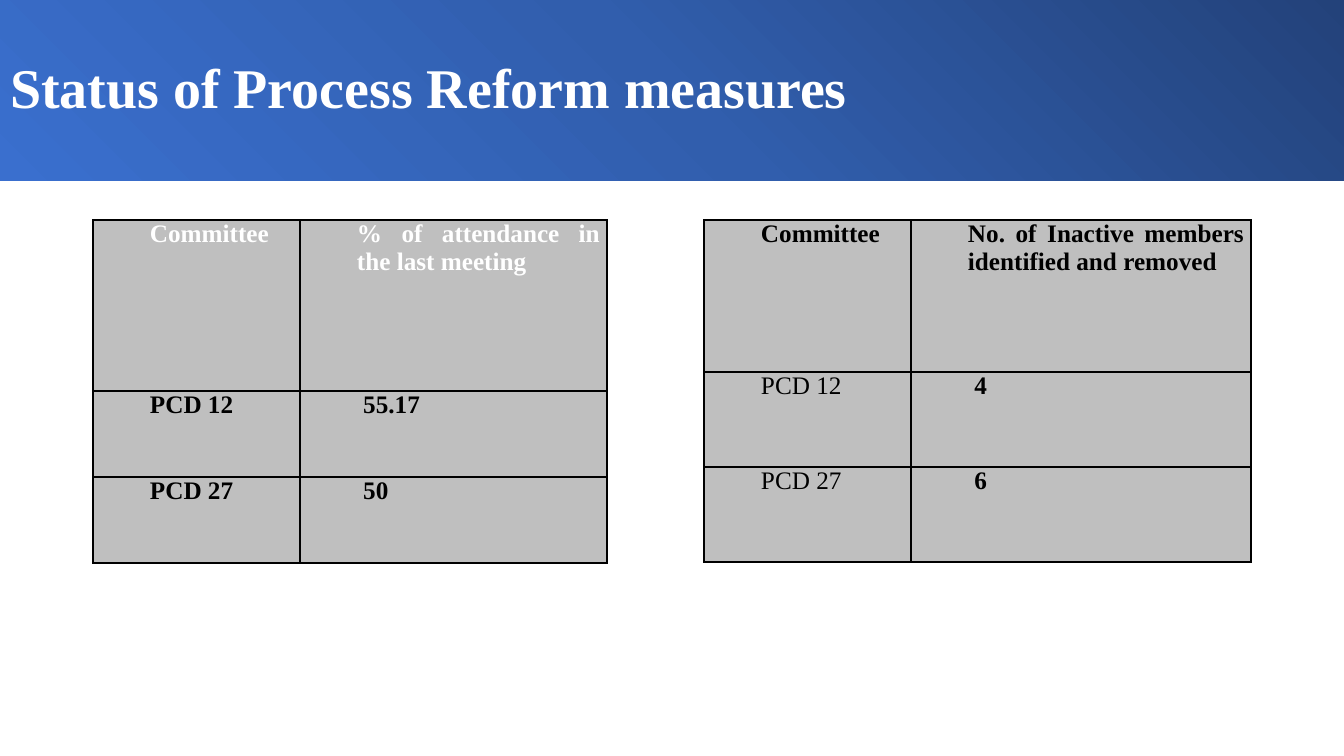
from copy import deepcopy

from pptx import Presentation
from pptx.dml.color import RGBColor
from pptx.enum.text import MSO_ANCHOR as Anchor, MSO_AUTO_SIZE as AutoSize, PP_ALIGN as Align
from pptx.oxml import parse_xml
from pptx.oxml.ns import nsdecls
from pptx.util import Pt

WHITE = RGBColor(0xFF, 0xFF, 0xFF)
BLACK = RGBColor(0x00, 0x00, 0x00)
GREY = RGBColor(0xBF, 0xBF, 0xBF)
BANNER_COLORS = (
    RGBColor(0x23, 0x42, 0x7A),
    RGBColor(0x31, 0x5E, 0xAD),
    RGBColor(0x3A, 0x6F, 0xCE),
)
SLIDE_WIDTH, SLIDE_HEIGHT = 1344, 756


def px(length):
    return round(length * 914400 / 100.8)


class ReportSlide:
    """Holds the style and the current slide, and adds its elements."""

    font_name = "Times New Roman"
    title_size = 40
    table_size = 18
    cell_margin = 7
    cell_indent = 50

    def __init__(self, presentation):
        self.slide = presentation.slides.add_slide(presentation.slide_layouts[5])

    def style_text(self, paragraph, size, color, bold):
        for run in paragraph.runs:
            font = run.font
            font.name, font.size, font.bold = self.font_name, Pt(size), bold
            font.color.rgb = color

    def title(self, text, height):
        shape = self.slide.shapes.title
        shape.left, shape.top = 0, 0
        shape.width, shape.height = px(SLIDE_WIDTH), px(height)
        self.gradient(shape.fill)
        frame = shape.text_frame
        frame.text = text
        frame.auto_size = AutoSize.NONE
        frame.vertical_anchor = Anchor.MIDDLE
        paragraph = frame.paragraphs[0]
        paragraph.alignment = Align.LEFT
        paragraph.line_spacing = 0.9
        self.style_text(paragraph, self.title_size, WHITE, True)

    def gradient(self, fill):
        fill.gradient()
        fill.gradient_angle = 225
        stop_list = fill._xPr.find(".//{*}gsLst")
        stop_list.insert(1, deepcopy(stop_list[0]))
        for index, (stop, color) in enumerate(zip(fill.gradient_stops, BANNER_COLORS)):
            stop.position = index / 2
            stop.color.rgb = color

    def table(self, left, top, widths, heights, rows, header_color, label_bold):
        table = self.slide.shapes.add_table(
            len(rows), len(widths), px(left), px(top), px(sum(widths)), px(sum(heights))
        ).table
        table.first_row = table.horz_banding = False
        for column, width in zip(table.columns, widths):
            column.width = px(width)
        for row, height in zip(table.rows, heights):
            row.height = px(height)
        for row_index, row in enumerate(rows):
            for column_index, text in enumerate(row):
                is_header = row_index == 0
                color = header_color if is_header else BLACK
                bold = is_header or column_index > 0 or label_bold
                self.cell(table.cell(row_index, column_index), text, color, bold)

    def cell(self, cell, text, color, bold):
        cell.margin_left = cell.margin_right = px(self.cell_margin)
        cell.margin_top = cell.margin_bottom = 0
        self.borders(cell)
        cell.fill.solid()
        cell.fill.fore_color.rgb = GREY
        cell.text_frame.text = text
        paragraph = cell.text_frame.paragraphs[0]
        paragraph.alignment = Align.JUSTIFY
        paragraph._p.get_or_add_pPr().set("marL", str(px(self.cell_indent)))
        self.style_text(paragraph, self.table_size, color, bold)

    def borders(self, cell):
        properties = cell._tc.get_or_add_tcPr()
        for side in "LRTB":
            properties.append(parse_xml(
                f'<a:ln{side} {nsdecls("a")} w="{Pt(1)}"><a:solidFill>'
                f'<a:srgbClr val="{BLACK}"/></a:solidFill></a:ln{side}>'
            ))


def main():
    presentation = Presentation()
    presentation.slide_width = px(SLIDE_WIDTH)
    presentation.slide_height = px(SLIDE_HEIGHT)
    report = ReportSlide(presentation)
    report.title("Status of Process Reform measures", 181)
    attendance = [
        ("Committee", "% of attendance in the last meeting"),
        ("PCD 12", " 55.17"),
        ("PCD 27", " 50"),
    ]
    inactive_members = [
        ("Committee", "No. of Inactive members identified and removed"),
        ("PCD 12", " 4"),
        ("PCD 27", " 6"),
    ]
    report.table(93, 220, (207, 307), (171, 86, 86), attendance, WHITE, True)
    report.table(704, 220, (207, 340), (152, 95, 95), inactive_members, BLACK, False)
    presentation.save("out.pptx")


if __name__ == "__main__":
    main()
